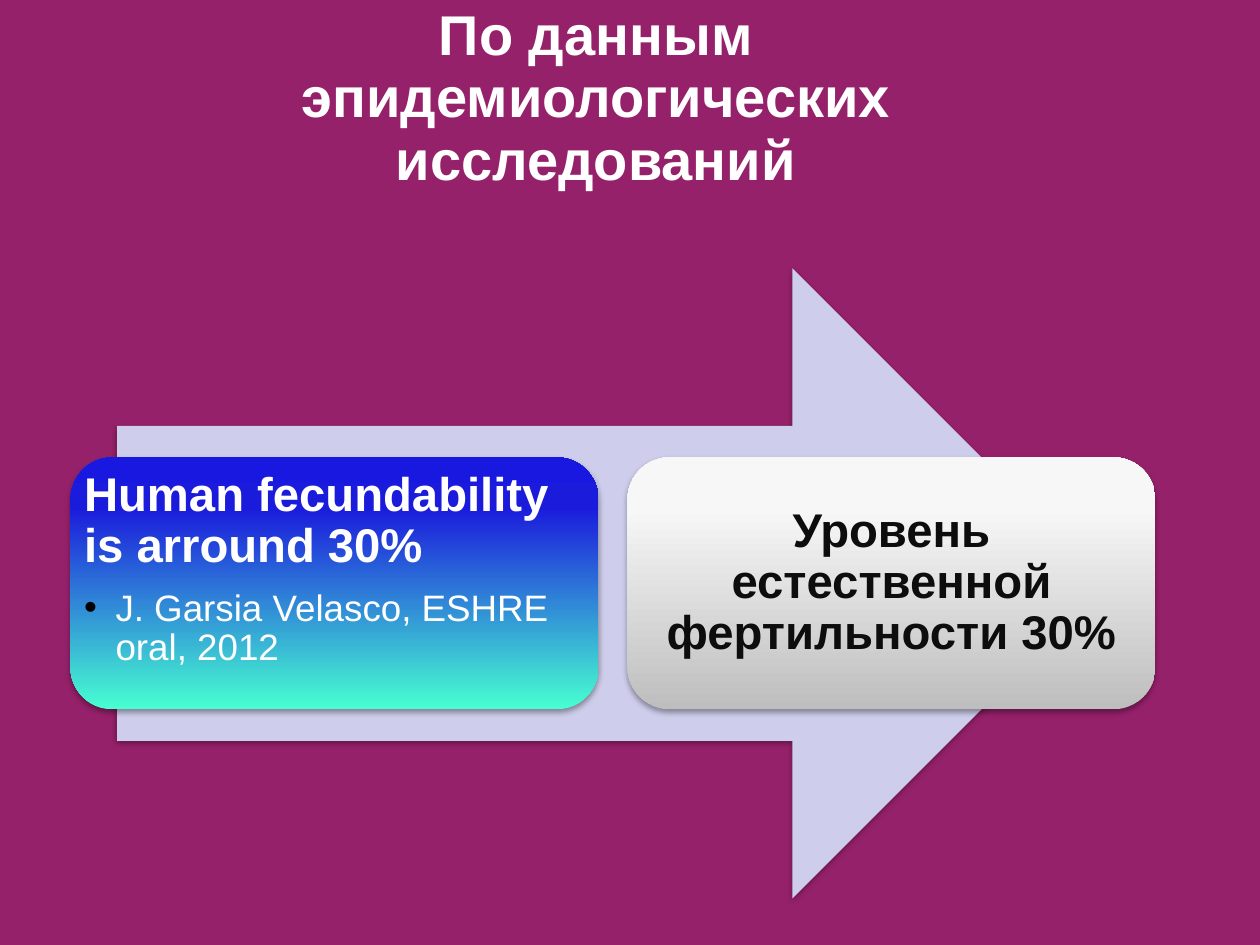
"""Build a slide on natural fecundability with two cards on a wide arrow."""
import copy

import pptx
import pptx.dml.color
import pptx.enum.shapes
import pptx.enum.text
import pptx.oxml
import pptx.oxml.ns
import pptx.util

Inches, Pt = pptx.util.Inches, pptx.util.Pt
SHAPE = pptx.enum.shapes.MSO_SHAPE
ALIGN = pptx.enum.text.PP_ALIGN
ANCHOR = pptx.enum.text.MSO_ANCHOR

BACKGROUND, ARROW_COLOUR = "96216B", "CECEEC"
HEADING = {
    "text": "По данным эпидемиологических исследований",
    "font": {"size": Pt(32), "bold": True}, "colour": "FFFFFF",
    "layout": {"alignment": ALIGN.CENTER, "line_spacing": 0.93},
}
CARD_FONT = {"size": Pt(27), "bold": True}
CARD_LAYOUT = {"line_spacing": 0.9, "space_after": Pt(9.45)}
CARDS = [
    {
        "stops": [(0, "47FFD1"), (0.8, "1B1BDC"), (1, "1818E1")],
        "anchor": ANCHOR.TOP,
        "lines": [
            {"text": "Human fecundability is arround 30%", "font": CARD_FONT,
             "colour": "FFFFFF", "layout": {"alignment": ALIGN.LEFT, **CARD_LAYOUT}},
            {"text": "J. Garsia Velasco, ESHRE oral, 2012",
             "font": {"size": Pt(21), "bold": False}, "colour": "FFFFFF", "bullet": "000000",
             "layout": {"alignment": ALIGN.LEFT, "line_spacing": 0.9,
                        "space_after": Pt(3.15), "level": 1}},
        ],
    },
    {
        "stops": [(0, "BEBEBE"), (0.8, "F7F7F7"), (1, "F8F8F8")],
        "anchor": ANCHOR.MIDDLE,
        "lines": [
            {"text": "Уровень естественной фертильности 30%", "font": CARD_FONT,
             "colour": "0D0D0D", "layout": {"alignment": ALIGN.CENTER, **CARD_LAYOUT}},
        ],
    },
]
CARD_LEFT, CARD_TOP, CARD_WIDTH, CARD_HEIGHT, CARD_GAP = 0.56, 3.63, 4.19, 2, 0.23
SHADOW = (
    '<a:outerShdw %s blurRad="40000" dist="23000" dir="5400000" rotWithShape="0">'
    '<a:srgbClr val="000000"><a:alpha val="35000"/></a:srgbClr></a:outerShdw>'
)
BULLET = (
    '<a:buClr %s><a:srgbClr val="{}"/></a:buClr>',
    '<a:buFont %s typeface="Arial"/>',
    '<a:buChar %s char="•"/>',
)


def rgb(colour):
    return pptx.dml.color.RGBColor.from_string(colour)


def element(markup):
    return pptx.oxml.parse_xml(markup % pptx.oxml.ns.nsdecls("a"))


def apply(target, values):
    for name, value in values.items():
        setattr(target, name, value)


def write(frame, lines, margins, anchor):
    sides = ("margin_left", "margin_top", "margin_right", "margin_bottom")
    apply(frame, {"word_wrap": True, "vertical_anchor": anchor})
    apply(frame, {side: Inches(margin) for side, margin in zip(sides, margins)})
    for index, line in enumerate(lines):
        paragraph = frame.add_paragraph() if index else frame.paragraphs[0]
        apply(paragraph, line["layout"])
        run = paragraph.add_run()
        run.text = line["text"]
        apply(run.font, {"name": "Arial", **line["font"]})
        run.font.color.rgb = rgb(line["colour"])
        if "bullet" in line:
            properties = paragraph._p.get_or_add_pPr()
            properties.set("marL", str(Inches(0.25)))
            properties.set("indent", str(Inches(-0.25)))
            for markup in BULLET:
                properties.append(element(markup.format(line["bullet"])))


def add_shadowed(slide, kind, left, top, width, height):
    shape = slide.shapes.add_shape(kind, *map(Inches, (left, top, width, height)))
    shape.line.fill.background()
    shape.shadow.inherit = False
    shape._element.spPr.find(pptx.oxml.ns.qn("a:effectLst")).append(element(SHADOW))
    return shape


def fill_gradient(fill, stops):
    fill.gradient()
    fill.gradient_angle = 90
    first = fill.gradient_stops[0]._gs
    first.addnext(copy.deepcopy(first))
    for stop, (position, colour) in zip(fill.gradient_stops, stops):
        stop.position = position
        stop.color.rgb = rgb(colour)


def main():
    deck = pptx.Presentation()
    apply(deck, {"slide_width": Inches(10), "slide_height": Inches(7.5)})
    slide = deck.slides.add_slide(deck.slide_layouts[6])
    slide.background.fill.solid()
    slide.background.fill.fore_color.rgb = rgb(BACKGROUND)

    heading = slide.shapes.add_textbox(*map(Inches, (1.8, 0, 5.86, 1.59)))
    write(heading.text_frame, [HEADING], (0.09, 0.04, 0.09, 0.04), ANCHOR.TOP)

    arrow = add_shadowed(slide, SHAPE.RIGHT_ARROW, 0.93, 2.13, 7.86, 5)
    arrow.fill.solid()
    arrow.fill.fore_color.rgb = rgb(ARROW_COLOUR)

    for index, content in enumerate(CARDS):
        left = CARD_LEFT + index * (CARD_WIDTH + CARD_GAP)
        card = add_shadowed(slide, SHAPE.ROUNDED_RECTANGLE, left, CARD_TOP, CARD_WIDTH, CARD_HEIGHT)
        fill_gradient(card.fill, content["stops"])
        write(card.text_frame, content["lines"], (0.01,) * 4, content["anchor"])

    deck.save("out.pptx")


if __name__ == "__main__":
    main()
